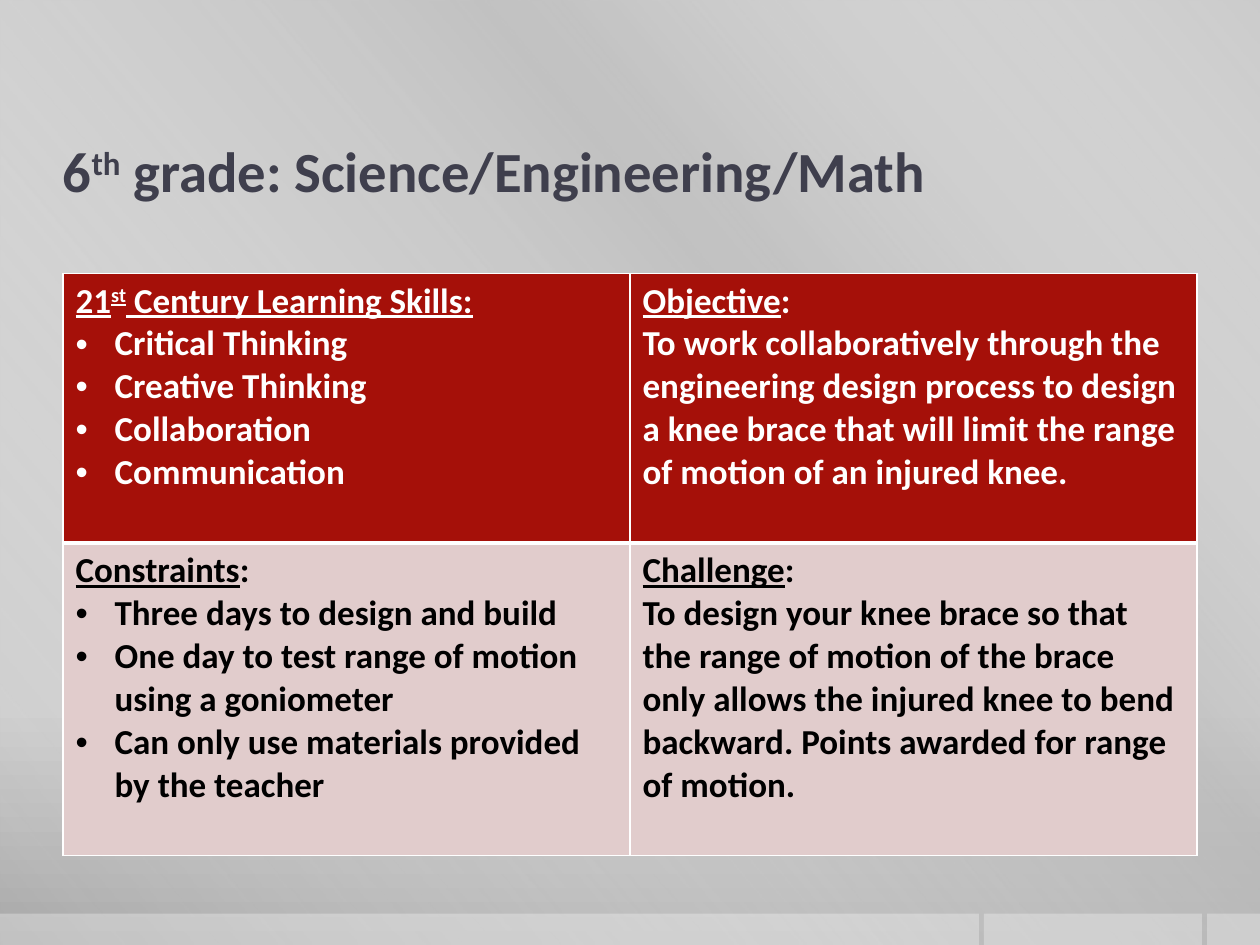
from lxml.etree import SubElement
from pptx import Presentation
from pptx.dml.color import RGBColor
from pptx.enum.shapes import MSO_SHAPE
from pptx.enum.text import MSO_ANCHOR
from pptx.oxml.ns import qn
from pptx.util import Inches, Pt

HEX = {
    "white": "FFFFFF", "black": "000000", "title": "3F3F4D",
    "red": "A51009", "pink": "E1CCCC", "gray": "BFBFBF",
    "top": "CBCBCB", "mid": "C8C8C8", "low": "A7A7A7",
}


def node(parent, tag, **attrs):
    return SubElement(parent, qn(tag), {k: str(v) for k, v in attrs.items()})


def write(para, text, size=20, color="white", bold=True, line=False, base=0):
    """Add one formatted run to a paragraph."""
    run = para.add_run()
    run.text = text
    font = run.font
    font.name, font.size, font.bold = "Calibri", Pt(size), bold
    font.underline = line
    font.color.rgb = RGBColor.from_string(HEX[color])
    if base:
        run._r.get_or_add_rPr().set("baseline", str(base * 1000))


class Deck:
    def __init__(self):
        self.prs = Presentation()
        self.prs.slide_width, self.prs.slide_height = Inches(10), Inches(7.5)
        self.slide = self.prs.slides.add_slide(self.prs.slide_layouts[6])

    def blend(self, fill, owner, stops, angle):
        """Swap a plain fill for a gradient of (position, color, opacity)."""
        fill.solid()
        fill.fore_color.rgb = RGBColor.from_string(HEX["white"])
        plain = next(owner.iter(qn("a:solidFill")))
        grad = node(plain.getparent(), "a:gradFill", rotWithShape=1)
        plain.getparent().replace(plain, grad)
        list_ = node(grad, "a:gsLst")
        for pos, color, alpha in stops:
            stop = node(list_, "a:gs", pos=pos * 1000)
            tint = node(stop, "a:srgbClr", val=HEX[color])
            node(tint, "a:alpha", val=alpha * 1000)
        node(grad, "a:lin", ang=angle * 60000, scaled=0)

    def back(self, stops, angle):
        fill = self.slide.background.fill
        self.blend(fill, self.slide._element.cSld, stops, angle)

    def rect(self, x, y, w, h):
        box = self.slide.shapes.add_shape(
            MSO_SHAPE.RECTANGLE, Inches(x), Inches(y), Inches(w), Inches(h))
        box.shadow.inherit = False
        box.line.fill.background()
        return box

    def sheen(self, stops, angle):
        box = self.rect(0, 0, 10, 7.5)
        self.blend(box.fill, box._element.spPr, stops, angle)

    def bar(self, x, w, alpha=30):
        box = self.rect(x, 7.25, w, 0.25)
        box.fill.solid()
        box.fill.fore_color.rgb = RGBColor.from_string(HEX["white"])
        tint = next(box._element.spPr.iter(qn("a:srgbClr")))
        node(tint, "a:alpha", val=alpha * 1000)

    def title(self, parts):
        box = self.slide.shapes.add_textbox(
            Inches(0.5), Inches(1.08), Inches(9), Inches(1))
        frame = box.text_frame
        frame.word_wrap = True
        frame.vertical_anchor = MSO_ANCHOR.TOP
        frame.margin_left = frame.margin_right = frame.margin_top = 0
        for text, base in parts:
            write(frame.paragraphs[0], text, size=32.4, color="title", base=base)

    def edges(self, cell, widths):
        """Draw white borders: left, right, top, bottom, in points."""
        props = cell._tc.get_or_add_tcPr()
        for i, (side, width) in enumerate(zip("LRTB", widths)):
            edge = node(props, f"a:ln{side}", w=Pt(width))
            node(node(edge, "a:solidFill"), "a:srgbClr", val=HEX["white"])
            props.insert(i, edge)

    def cell(self, cell, head, lines, bullets, fill, color):
        cell.fill.solid()
        cell.fill.fore_color.rgb = RGBColor.from_string(HEX[fill])
        frame = cell.text_frame
        for text, style in head:
            write(frame.paragraphs[0], text, color=color, **style)
        for text in lines:
            para = frame.add_paragraph()
            if bullets:
                props = para._p.get_or_add_pPr()
                props.set("marL", str(Inches(0.31)))
                props.set("indent", str(-Inches(0.31)))
                node(props, "a:buFont", typeface="Arial")
                node(props, "a:buChar", char="•")
            write(para, text, color=color)

    def table(self, rows, looks, highs):
        grid = self.slide.shapes.add_table(
            len(rows), 2, Inches(0.5), Inches(2.17), Inches(9),
            Inches(sum(highs))).table
        for r, (row, look, high) in enumerate(zip(rows, looks, highs)):
            grid.rows[r].height = Inches(high)
            fill, color, widths = look
            for c, (head, lines, bullets) in enumerate(row):
                cell = grid.cell(r, c)
                self.cell(cell, head, lines, bullets, fill, color)
                self.edges(cell, widths)


def label(text):
    return [(text, {"line": True}), (":", {})]


def main():
    deck = Deck()

    # Background, sheen and footer bars
    deck.back([(0, "top", 100), (76, "mid", 100), (100, "low", 100)], 90)
    deck.sheen([(0, "white", 0), (34, "gray", 61),
                (38, "gray", 76), (100, "white", 0)], 140)
    for x, w in [(9.58, 0.42), (7.81, 1.73), (0, 7.77)]:
        deck.bar(x, w)

    # Title
    deck.title([("6", 0), ("th", 30), (" grade: Science/Engineering/Math", 0)])

    # Table of the project: (heading, lines, bullets)
    skills = [("21", {"line": True}), ("st", {"line": True, "base": 30}),
              (" Century Learning Skills:", {"line": True})]
    rows = [
        [(skills, ["Critical Thinking", "Creative Thinking",
                   "Collaboration", "Communication"], True),
         (label("Objective"),
          ["To work collaboratively through the engineering design process to "
           "design a knee brace that will limit the range of motion of an "
           "injured knee."], False)],
        [(label("Constraints"),
          ["Three days to design and build",
           "One day to test range of motion using a goniometer",
           "Can only use materials provided by the teacher"], True),
         (label("Challenge"),
          ["To design your knee brace so that the range of motion of the brace "
           "only allows the injured knee to bend backward. Points awarded for "
           "range of motion."], False)],
    ]
    looks = [("red", "white", (1, 1, 1, 3)), ("pink", "black", (1, 1, 3, 1))]
    deck.table(rows, looks, [2.14, 2.48])

    deck.prs.save("out.pptx")


if __name__ == "__main__":
    main()
